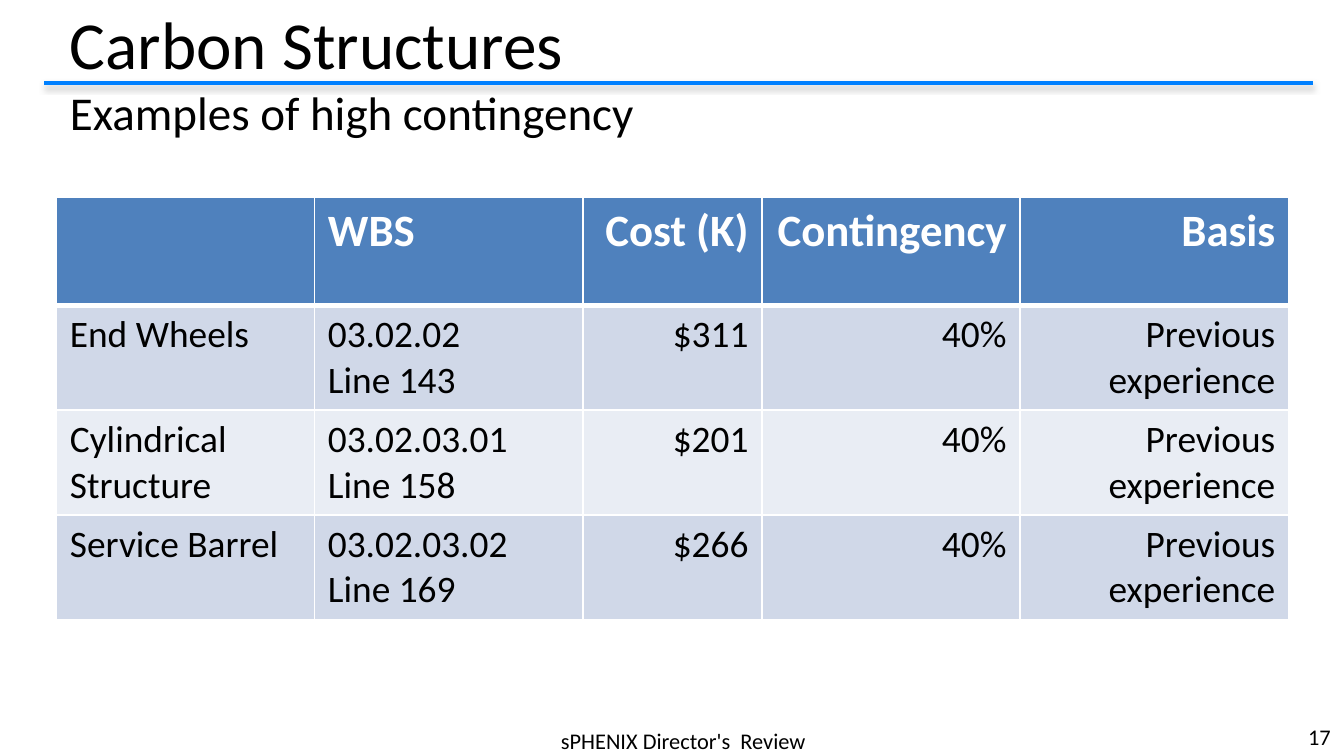
from dataclasses import dataclass

import pptx
import pptx.dml.color
import pptx.enum.shapes
import pptx.enum.text
import pptx.oxml
import pptx.oxml.ns
import pptx.util

Inches = pptx.util.Inches
Pt = pptx.util.Pt
ALIGN = pptx.enum.text.PP_ALIGN
MIDDLE = pptx.enum.text.MSO_ANCHOR.MIDDLE

FONT = "Calibri"
COLORS = {
    "text": "000000",
    "white": "FFFFFF",
    "rule": "0080FF",
    "shadow": "808080",
    "header": "4F81BD",
    "odd": "D0D8E8",
    "even": "E9EDF4",
}


@dataclass
class Column:
    heading: str
    width: float
    align: ALIGN


@dataclass
class Item:
    name: str
    wbs: str
    cost: str
    contingency: str = "40%"
    basis: str = "Previous experience"

    def values(self) -> list[str]:
        return [self.name, self.wbs, self.cost, self.contingency, self.basis]


@dataclass
class Label:
    text: str
    left: float
    top: float
    width: float
    height: float
    align: ALIGN


COLUMNS = [
    Column("", 1.92, ALIGN.LEFT),
    Column("WBS", 2, ALIGN.LEFT),
    Column("Cost (K)", 1.33, ALIGN.RIGHT),
    Column("Contingency", 1.92, ALIGN.RIGHT),
    Column("Basis", 2, ALIGN.RIGHT),
]
ITEMS = [
    Item("End Wheels", "03.02.02\nLine 143", "$311"),
    Item("Cylindrical Structure", "03.02.03.01\nLine 158", "$201"),
    Item("Service Barrel", "03.02.03.02\nLine 169", "$266"),
]
LABELS = [
    Label("sPHENIX Director's  Review", 3.5, 5.39, 3.17, 0.24, ALIGN.CENTER),
    Label("17", 9.42, 5.33, 0.58, 0.3, ALIGN.RIGHT),
]
HEADER_HEIGHT = 0.8
ROW_HEIGHT = 0.78


def rgb(name: str) -> pptx.dml.color.RGBColor:
    return pptx.dml.color.RGBColor.from_string(COLORS[name])


def format_run(r, size: float, color: str = "text", bold: bool = False) -> None:
    r.font.name = FONT
    r.font.size = Pt(size)
    r.font.bold = bold
    r.font.color.rgb = rgb(color)


def format_text(tf, size: float, align: ALIGN, color: str = "text", bold: bool = False) -> None:
    for p in tf.paragraphs:
        p.alignment = align
        for r in p.runs:
            format_run(r, size, color, bold)


def add_rule(s) -> None:
    sp = s.shapes.add_connector(
        pptx.enum.shapes.MSO_CONNECTOR.STRAIGHT,
        Inches(0.33), Inches(0.62), Inches(9.77), Inches(0.62),
    )
    sp.line.color.rgb = rgb("rule")
    sp.line.width = Pt(2.25)
    sp.element.spPr.append(pptx.oxml.parse_xml(
        f'<a:effectLst {pptx.oxml.ns.nsdecls("a")}>'
        f'<a:outerShdw blurRad="{Pt(3.1)}" dist="{Pt(1.6)}" dir="5400000" rotWithShape="0">'
        f'<a:srgbClr val="{COLORS["shadow"]}"><a:alpha val="38000"/></a:srgbClr>'
        "</a:outerShdw></a:effectLst>"
    ))


def add_title(s) -> None:
    sp = s.shapes.title
    sp.left, sp.top, sp.width, sp.height = Inches(0.42), 0, Inches(11.08), Inches(1.06)
    tf = sp.text_frame
    tf.text = "Carbon Structures\vExamples of high contingency"
    tf.auto_size = pptx.enum.text.MSO_AUTO_SIZE.NONE
    tf.vertical_anchor = MIDDLE
    p = tf.paragraphs[0]
    p.alignment = ALIGN.LEFT
    for r, size in zip(p.runs, (36, 25.2)):
        format_run(r, size)


def add_label(s, label: Label) -> None:
    sp = s.shapes.add_textbox(
        Inches(label.left), Inches(label.top), Inches(label.width), Inches(label.height)
    )
    tf = sp.text_frame
    tf.word_wrap = True
    tf.vertical_anchor = MIDDLE
    tf.text = label.text
    format_text(tf, 12, label.align)


def set_borders(cell, bottom: float, top: float) -> None:
    tcPr = cell._tc.get_or_add_tcPr()
    for side, width in {"L": 1, "R": 1, "T": top, "B": bottom}.items():
        tcPr.append(pptx.oxml.parse_xml(
            f'<a:ln{side} {pptx.oxml.ns.nsdecls("a")} w="{Pt(width)}">'
            f'<a:solidFill><a:srgbClr val="{COLORS["white"]}"/></a:solidFill></a:ln{side}>'
        ))


def add_cost_table(s) -> None:
    rows = [[column.heading for column in COLUMNS]] + [item.values() for item in ITEMS]
    table = s.shapes.add_table(
        len(rows), len(COLUMNS), Inches(0.42), Inches(1.47),
        Inches(sum(column.width for column in COLUMNS)),
        Inches(HEADER_HEIGHT + ROW_HEIGHT * len(ITEMS)),
    ).table
    for i, column in enumerate(COLUMNS):
        table.columns[i].width = Inches(column.width)
    for i, values in enumerate(rows):
        header = i == 0
        table.rows[i].height = Inches(HEADER_HEIGHT if header else ROW_HEIGHT)
        fill = "header" if header else "odd" if i % 2 else "even"
        for j, (column, value) in enumerate(zip(COLUMNS, values)):
            cell = table.cell(i, j)
            set_borders(cell, bottom=3 if header else 1, top=3 if i == 1 else 1)
            cell.fill.solid()
            cell.fill.fore_color.rgb = rgb(fill)
            cell.text_frame.text = value
            format_text(
                cell.text_frame, 24 if header else 20, column.align,
                "white" if header else "text", header,
            )


def main() -> None:
    prs = pptx.Presentation()
    prs.slide_width = Inches(10)
    prs.slide_height = Inches(10 * 9 / 16)
    s = prs.slides.add_slide(prs.slide_layouts[5])
    add_rule(s)
    add_title(s)
    add_cost_table(s)
    for label in LABELS:
        add_label(s, label)
    prs.save("out.pptx")


if __name__ == "__main__":
    main()
